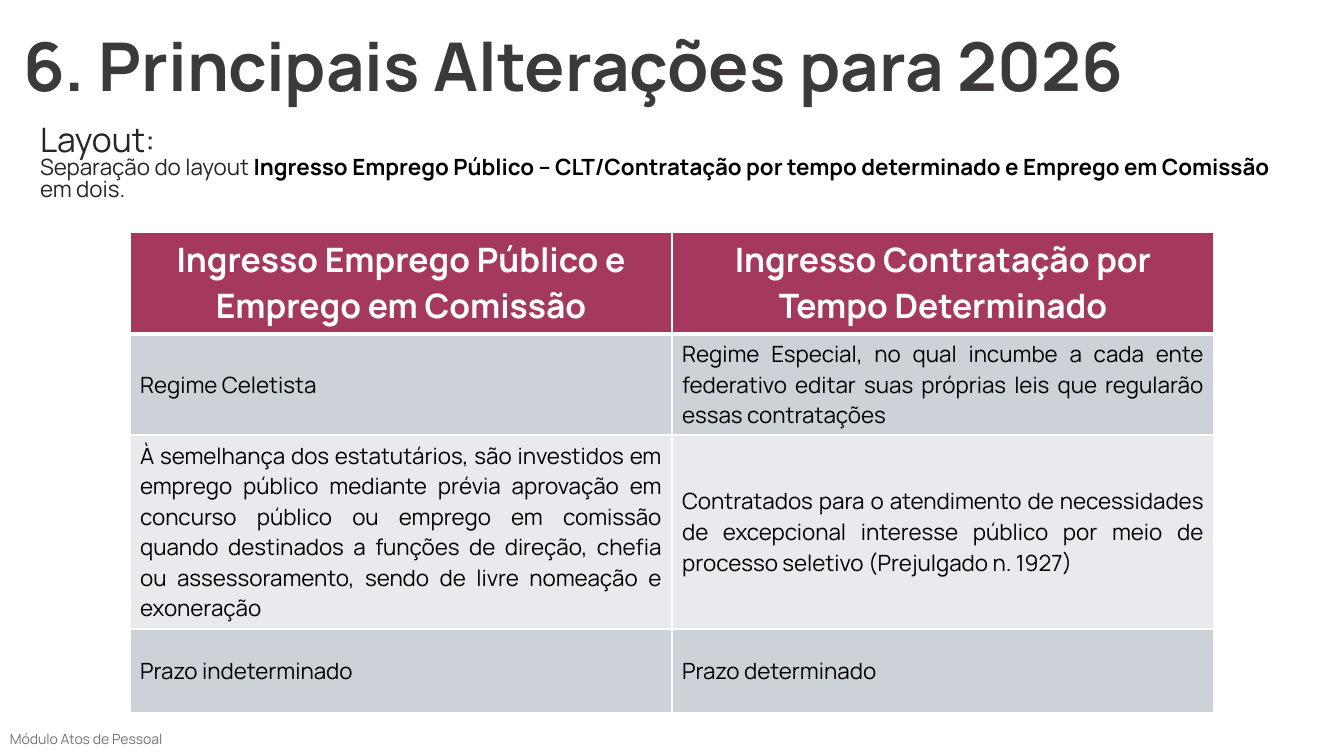
from lxml.etree import SubElement
from pptx import Presentation
from pptx.dml.color import RGBColor
from pptx.enum.text import MSO_ANCHOR, MSO_AUTO_SIZE, PP_ALIGN
from pptx.oxml.ns import qn
from pptx.util import Emu, Pt

FONT = "Manrope"
WHITE = "FFFFFF"
BLACK = "000000"
DARK = "262626"
HEADER_FILL = "A5395D"
BAND_FILLS = ("CCD2D8", "E8EAED")
ROW_HEIGHTS = (102, 101, 194, 84)
COL_WIDTH = 542
ROWS = (
    ("Ingresso Emprego Público e Emprego em Comissão",
     "Ingresso Contratação por Tempo Determinado"),
    ("Regime Celetista",
     "Regime Especial, no qual incumbe a cada ente federativo editar suas "
     "próprias leis que regularão essas contratações"),
    ("À semelhança dos estatutários, são investidos em emprego público "
     "mediante prévia aprovação em concurso público ou emprego em comissão "
     "quando destinados a funções de direção, chefia ou assessoramento, "
     "sendo de livre nomeação e exoneração",
     "Contratados para o atendimento de necessidades de excepcional interesse "
     "público por meio de processo seletivo (Prejulgado n. 1927)"),
    ("Prazo indeterminado", "Prazo determinado"),
)


def px(n):
    return Emu(round(n * 914400 / 100.8))


def rgb(value):
    return RGBColor.from_string(value)


def style(r, size, color, bold=False):
    r.font.name = FONT
    r.font.size = Pt(size)
    r.font.bold = bold
    r.font.color.rgb = rgb(color)


def place(sp, x, y, w, h):
    sp.left, sp.top, sp.width, sp.height = px(x), px(y), px(w), px(h)


def add_title(s, text):
    sp = s.shapes.title
    place(sp, 23, 24, 1120, 92)
    tf = sp.text_frame
    tf.text = text
    tf.auto_size = MSO_AUTO_SIZE.NONE
    tf.word_wrap = False
    tf.vertical_anchor = MSO_ANCHOR.TOP
    tf.margin_left = tf.margin_right = tf.margin_top = tf.margin_bottom = 0
    p = tf.paragraphs[0]
    p.alignment = PP_ALIGN.LEFT
    style(p.runs[0], 48, "3C3939", True)


def add_body(s, heading, parts):
    sp = s.placeholders[1]
    place(sp, 30, 120, 1255, 88)
    tf = sp.text_frame
    tf.auto_size = MSO_AUTO_SIZE.NONE
    tf.word_wrap = True
    tf.vertical_anchor = MSO_ANCHOR.MIDDLE
    p = tf.paragraphs[0]
    pPr = p._p.get_or_add_pPr()
    pPr.set("marL", "0")
    pPr.set("indent", "0")
    SubElement(pPr, qn("a:buNone"))
    p.line_spacing = 0.8
    p.space_before = Pt(0)
    r = p.add_run()
    r.text = heading
    style(r, 24, DARK)
    p.add_line_break()
    for text, color, bold in parts:
        r = p.add_run()
        r.text = text
        style(r, 16, color, bold)


def add_footer(s, text):
    sp = s.shapes.add_textbox(px(0), px(729), px(1285), px(22))
    tf = sp.text_frame
    tf.text = text
    tf.word_wrap = True
    tf.vertical_anchor = MSO_ANCHOR.MIDDLE
    p = tf.paragraphs[0]
    p.line_spacing = 0.9
    style(p.runs[0], 10, "747474")


def set_borders(cell, top, bottom):
    tcPr = cell._tc.get_or_add_tcPr()
    for side, width in (("L", 1), ("R", 1), ("T", top), ("B", bottom)):
        ln = SubElement(tcPr, qn(f"a:ln{side}"), w=str(Pt(width)))
        fill = SubElement(ln, qn("a:solidFill"))
        SubElement(fill, qn("a:srgbClr"), val=WHITE)


def fill_cell(cell, text, row):
    header = row == 0
    set_borders(cell, 3 if row == 1 else 1, 3 if header else 1)
    cell.fill.solid()
    cell.fill.fore_color.rgb = rgb(HEADER_FILL if header else BAND_FILLS[(row - 1) % 2])
    cell.vertical_anchor = MSO_ANCHOR.MIDDLE
    cell.text_frame.text = text
    p = cell.text_frame.paragraphs[0]
    p.alignment = PP_ALIGN.CENTER if header else PP_ALIGN.JUSTIFY
    style(p.runs[0], 24 if header else 16, WHITE if header else BLACK, header)


def add_comparison(s):
    table = s.shapes.add_table(len(ROWS), 2, px(130), px(232),
                               px(2 * COL_WIDTH), px(sum(ROW_HEIGHTS))).table
    for column in table.columns:
        column.width = px(COL_WIDTH)
    for i, (height, texts) in enumerate(zip(ROW_HEIGHTS, ROWS)):
        table.rows[i].height = px(height)
        for j, text in enumerate(texts):
            fill_cell(table.cell(i, j), text, i)


def main():
    prs = Presentation()
    prs.slide_width, prs.slide_height = px(1344), px(756)
    s = prs.slides.add_slide(prs.slide_layouts[1])
    add_footer(s, "Módulo Atos de Pessoal")
    add_title(s, "6. Principais Alterações para 2026")
    add_comparison(s)
    add_body(s, "Layout:", (
        ("Separação do layout ", DARK, False),
        ("Ingresso Emprego Público – CLT/Contratação por tempo determinado "
         "e Emprego em Comissão", BLACK, True),
        (" em dois.", DARK, False),
    ))
    prs.save("out.pptx")


if __name__ == "__main__":
    main()
